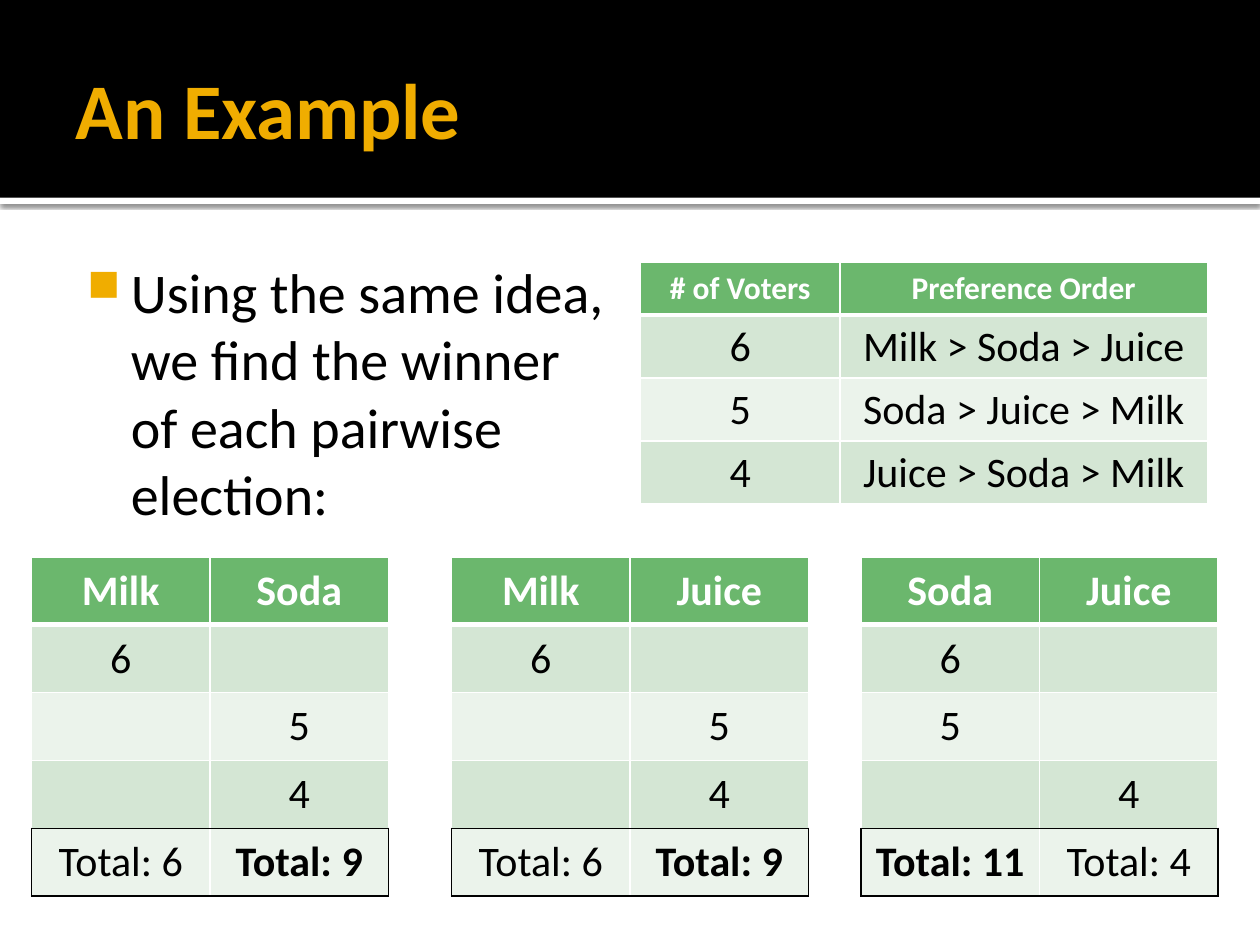
import pptx
import pptx.dml.color
import pptx.enum.shapes
import pptx.enum.text
import pptx.oxml
import pptx.oxml.ns
import pptx.util
from lxml import etree

Pt = pptx.util.Pt
qn = pptx.oxml.ns.qn
MIDDLE = pptx.enum.text.MSO_ANCHOR.MIDDLE
CENTER = pptx.enum.text.PP_ALIGN.CENTER


def color(hex_string):
    return pptx.dml.color.RGBColor.from_string(hex_string)


def add_element(parent, tag, **attributes):
    element = etree.SubElement(parent, qn(tag))
    for name, value in attributes.items():
        element.set(name, str(value))
    return element


class SlideBuilder:
    font_name = "Calibri"
    black = "000000"
    white = "FFFFFF"
    gold = "F0AD00"
    header_fill = "6BB76D"
    band_fills = ("EBF3EB", "D4E6D4")

    def __init__(self, slide):
        self.slide = slide

    def format_paragraph(self, paragraph, size, hex_string, bold=False):
        for run in paragraph.runs:
            run.font.name = self.font_name
            run.font.size = Pt(size)
            run.font.bold = bold
            run.font.color.rgb = color(hex_string)

    def bar(self, left, top, width, height, fill, shadow=False):
        shape = self.slide.shapes.add_shape(
            pptx.enum.shapes.MSO_SHAPE.RECTANGLE, Pt(left), Pt(top), Pt(width), Pt(height))
        shape.shadow.inherit = False
        shape.fill.solid()
        shape.fill.fore_color.rgb = color(fill)
        shape.line.fill.background()
        if shadow:
            effects = shape.element.spPr.find(qn("a:effectLst"))
            outer = add_element(effects, "a:outerShdw", blurRad=Pt(2.5), dist=Pt(0.8),
                                dir=5400000, algn="tl", rotWithShape=0)
            shade = add_element(outer, "a:srgbClr", val=self.black)
            add_element(shade, "a:alpha", val=60000)

    def text(self, left, top, width, height, text, size, hex_string, margins, bold=False):
        shape = self.slide.shapes.add_textbox(Pt(left), Pt(top), Pt(width), Pt(height))
        frame = shape.text_frame
        frame.word_wrap = True
        frame.margin_left, frame.margin_top, frame.margin_right, frame.margin_bottom = map(Pt, margins)
        paragraph = frame.paragraphs[0]
        paragraph.text = text
        self.format_paragraph(paragraph, size, hex_string, bold)
        return frame

    def title(self, text):
        frame = self.text(36, 12.25, 648, 98.5, text, 45, self.gold, (7.2, 3.6, 3.6, 3.6), True)
        frame.vertical_anchor = MIDDLE

    def bullet(self, text):
        frame = self.text(36, 140, 642, 214.5, text, 32, self.black, (4.3, 7.2, 7.2, 3.6))
        paragraph = frame.paragraphs[0]
        paragraph.space_after = Pt(12)
        properties = paragraph._p.get_or_add_pPr()
        properties.set("marL", str(Pt(34.5)))
        properties.set("indent", str(Pt(-25)))
        bullet_color = add_element(properties, "a:buClr")
        add_element(bullet_color, "a:srgbClr", val=self.gold)
        add_element(properties, "a:buSzPct", val=80000)
        add_element(properties, "a:buChar", char="■")

    def border(self, cell, side, hex_string, width):
        line = add_element(cell._tc.get_or_add_tcPr(), "a:ln" + side, w=Pt(width))
        fill = add_element(line, "a:solidFill")
        add_element(fill, "a:srgbClr", val=hex_string)

    def cell_borders(self, cell, row, column, last_column, total_row):
        is_total = row == total_row
        self.border(cell, "L", self.black if is_total and column == 0 else self.white, 1)
        self.border(cell, "R", self.black if is_total and column == last_column else self.white, 1)
        for side, edge in (("T", row), ("B", row + 1)):
            outlined = total_row and edge in (total_row, total_row + 1)
            self.border(cell, side, self.black if outlined else self.white, 3 if edge == 1 else 1)

    def table(self, left, top, widths, heights, rows, header_size=24, total_row=None, bold_cells=()):
        frame = self.slide.shapes.add_table(
            len(rows), len(widths), Pt(left), Pt(top), Pt(sum(widths)), Pt(sum(heights)))
        table = frame.table
        for column, width in zip(table.columns, widths):
            column.width = Pt(width)
        for row, (height, values) in enumerate(zip(heights, rows)):
            table.rows[row].height = Pt(height)
            is_header = row == 0
            for column, value in enumerate(values):
                cell = table.cell(row, column)
                self.cell_borders(cell, row, column, len(widths) - 1, total_row)
                cell.fill.solid()
                cell.fill.fore_color.rgb = color(self.header_fill if is_header else self.band_fills[row % 2])
                cell.vertical_anchor = MIDDLE
                cell.text_frame.text = value
                paragraph = cell.text_frame.paragraphs[0]
                paragraph.alignment = CENTER
                self.format_paragraph(paragraph, header_size if is_header else 24,
                                      self.white if is_header else self.black,
                                      is_header or (row, column) in bold_cells)

    def pairwise_table(self, left, pair, ballots):
        rows = [pair]
        totals = [0, 0]
        for voters, ranking in ballots:
            preferred = min((0, 1), key=lambda index: ranking.index(pair[index]))
            totals[preferred] += voters
            rows.append([str(voters) if index == preferred else "" for index in (0, 1)])
        rows.append([f"Total: {total}" for total in totals])
        total_row = len(rows) - 1
        winner = totals.index(max(totals))
        self.table(left, 318.25, [102, 102], [38.8] * len(rows), rows,
                   total_row=total_row, bold_cells=[(total_row, winner)])


def main():
    presentation = pptx.Presentation()
    presentation.slide_width = Pt(720)
    presentation.slide_height = Pt(540)
    slide = presentation.slides.add_slide(presentation.slide_layouts[6])
    builder = SlideBuilder(slide)

    builder.bar(0, 113, 720, 3.6, builder.white, shadow=True)
    builder.bar(0, 0, 720, 113, builder.black)
    builder.title("An Example")
    builder.bullet("Using the same idea,\nwe find the winner\nof each pairwise\nelection:")

    ballots = [
        (6, ("Milk", "Soda", "Juice")),
        (5, ("Soda", "Juice", "Milk")),
        (4, ("Juice", "Soda", "Milk")),
    ]
    pairs = [(18, ("Milk", "Soda")), (258, ("Milk", "Juice")), (492, ("Soda", "Juice"))]
    for left, pair in pairs:
        builder.pairwise_table(left, pair, ballots)

    preferences = [(str(voters), " > ".join(ranking)) for voters, ranking in ballots]
    builder.table(366, 150, [114, 210], [30] + [34.5] * len(ballots),
                  [("# of Voters", "Preference Order")] + preferences, header_size=18)

    presentation.save("out.pptx")


if __name__ == "__main__":
    main()
